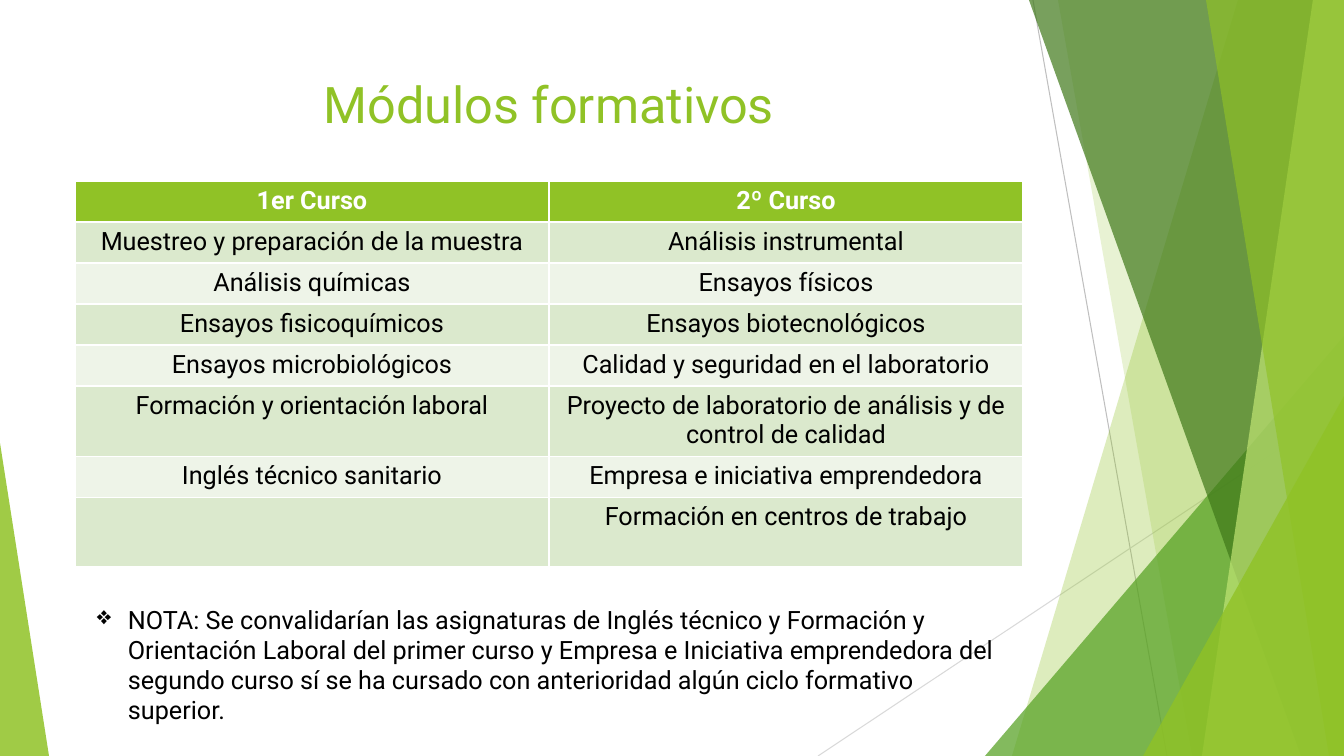
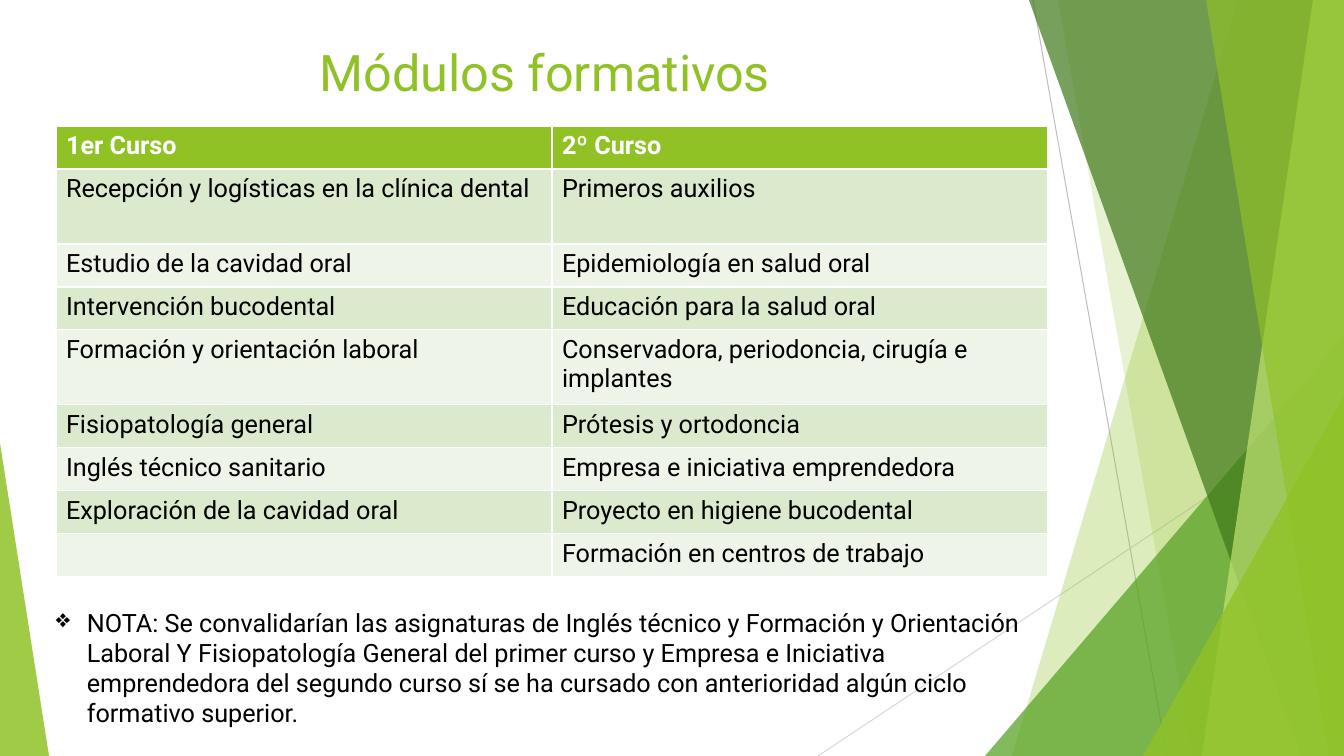
from lxml import etree
from pptx import Presentation
from pptx.dml.color import RGBColor
from pptx.enum.shapes import MSO_CONNECTOR, MSO_SHAPE
from pptx.enum.text import PP_ALIGN
from pptx.oxml.ns import qn
from pptx.util import Pt

STRAIGHT = MSO_CONNECTOR.STRAIGHT
TRIANGLE = MSO_SHAPE.ISOSCELES_TRIANGLE
LEFT, CENTER = PP_ALIGN.LEFT, PP_ALIGN.CENTER

FONT = "Roboto"
WIDE, HIGH = 1344, 756
INDENT = 31
LIME = RGBColor(0x90, 0xC2, 0x26)
GREEN = RGBColor(0x54, 0xA0, 0x21)
DARK = RGBColor(0x3F, 0x78, 0x19)
PALE = RGBColor(0xC0, 0xE4, 0x74)
MIST = RGBColor(0xEE, 0xF4, 0xE8)
SAGE = RGBColor(0xDB, 0xE9, 0xCD)
GREY = RGBColor(0xBF, 0xBF, 0xBF)
SILVER = RGBColor(0xD9, 0xD9, 0xD9)
WHITE = RGBColor(0xFF, 0xFF, 0xFF)
BLACK = RGBColor(0x00, 0x00, 0x00)

FIRST = [
    ("1er Curso", "2º Curso", 41),
    ("Muestreo y preparación de la muestra", "Análisis instrumental", 41),
    ("Análisis químicas", "Ensayos físicos", 41),
    ("Ensayos fisicoquímicos", "Ensayos biotecnológicos", 41),
    ("Ensayos microbiológicos", "Calidad y seguridad en el laboratorio", 41),
    ("Formación y orientación laboral",
     "Proyecto de laboratorio de análisis y de control de calidad", 69),
    ("Inglés técnico sanitario", "Empresa e iniciativa emprendedora", 41),
    ("", "Formación en centros de trabajo", 69),
]
SECOND = [
    ("1er Curso", "2º Curso", 43),
    ("Recepción y logísticas en la clínica dental", "Primeros auxilios", 75),
    ("Estudio de la cavidad oral", "Epidemiología en salud oral", 43),
    ("Intervención bucodental", "Educación para la salud oral", 43),
    ("Formación y orientación laboral",
     "Conservadora, periodoncia, cirugía e implantes", 75),
    ("Fisiopatología general", "Prótesis y ortodoncia", 43),
    ("Inglés técnico sanitario", "Empresa e iniciativa emprendedora", 43),
    ("Exploración de la cavidad oral", "Proyecto en higiene bucodental", 43),
    ("", "Formación en centros de trabajo", 43),
]
NOTE = ("NOTA: Se convalidarían las asignaturas de Inglés técnico y Formación y "
        "Orientación Laboral {}del primer curso y Empresa e Iniciativa "
        "emprendedora del segundo curso sí se ha cursado con anterioridad algún "
        "ciclo formativo superior.")


def px(count):
    """Turn pixels into EMU."""
    return round(count * 914400 / 100.8)


def style(para, size, color, align=LEFT, bold=False):
    """Set the look of one paragraph."""
    para.alignment = align
    font = para.font
    font.name, font.size, font.bold = FONT, Pt(size), bold
    font.color.rgb = color


def tint(shape, color, alpha):
    """Fill a shape with a see-through colour and no outline."""
    shape.shadow.inherit = False
    shape.line.fill.background()
    shape.fill.solid()
    shape.fill.fore_color.rgb = color
    node = shape.element.spPr.find(".//" + qn("a:srgbClr"))
    etree.SubElement(node, qn("a:alpha"), val=str(alpha * 1000))


def ray(slide, ends, color):
    """Draw a thin line."""
    line = slide.shapes.add_connector(STRAIGHT, *map(px, ends))
    line.line.color.rgb = color
    line.line.width = Pt(0.75)
    etree.SubElement(line.element.spPr, qn("a:effectLst"))


def wing(slide, top, foot, color, alpha):
    """Draw a full-height band from a slanted edge to the right side."""
    pen = slide.shapes.build_freeform(px(top), 0)
    pen.add_line_segments(
        [(px(x), px(y)) for x, y in ((WIDE, 0), (WIDE, HIGH), (foot, HIGH))])
    tint(pen.convert_to_shape(), color, alpha)


def peak(slide, left, top, width, apex, color, alpha):
    """Draw a right triangle standing on the lower edge."""
    box = map(px, (left, top, width, HIGH - top))
    shape = slide.shapes.add_shape(TRIANGLE, *box)
    shape.adjustments[0] = apex
    tint(shape, color, alpha)


def decor(slide):
    """Draw the green facets at the sides."""
    ray(slide, (1033, 0, 1167, HIGH), GREY)
    ray(slide, (WIDE, 406, 818, HIGH), SILVER)
    wing(slide, 1238, 1012, LIME, 30)
    wing(slide, 1058, 1192, LIME, 20)
    peak(slide, 985, 336, 359, 1, GREEN, 72)
    wing(slide, 1029, 1301, DARK, 70)
    wing(slide, 1313, 1202, PALE, 70)
    wing(slide, 1206, 1329, LIME, 65)
    peak(slide, 1143, 396, 201, 1, LIME, 80)
    peak(slide, 0, 443, 49, 0, LIME, 85)


def label(slide, box, text):
    """Place a wrapped text box and return its paragraph."""
    frame = slide.shapes.add_textbox(*map(px, box)).text_frame
    frame.word_wrap = True
    frame.text = text
    return frame.paragraphs[0]


def title(slide, box):
    """Place the slide title."""
    style(label(slide, box, "Módulos formativos"), 36, LIME, CENTER)


def grid(slide, left, top, width, rows, align):
    """Place the table of both courses."""
    high = sum(row[-1] for row in rows)
    box = map(px, (left, top, width, high))
    table = slide.shapes.add_table(len(rows), 2, *box).table
    for num, (*texts, tall) in enumerate(rows):
        table.rows[num].height = px(tall)
        head = num == 0
        back = LIME if head else SAGE if num % 2 else MIST
        for col, text in enumerate(texts):
            cell = table.cell(num, col)
            cell.text = text
            cell.fill.solid()
            cell.fill.fore_color.rgb = back
            style(cell.text_frame.paragraphs[0], 18,
                  WHITE if head else BLACK, align, head)


def note(slide, box, text):
    """Place the bulleted note."""
    para = label(slide, box, text)
    style(para, 18, BLACK)
    props = para._p.get_or_add_pPr()
    props.set("marL", str(px(INDENT)))
    props.set("indent", str(-px(INDENT)))
    mark = etree.Element(qn("a:buChar"), char="❖")
    props.insert(0, mark)


def page(deck, head, table, foot, extra):
    """Build one slide of modules."""
    slide = deck.slides.add_slide(deck.slide_layouts[6])
    decor(slide)
    title(slide, head)
    grid(slide, *table)
    note(slide, foot, NOTE.format(extra))


def main():
    """Build and save the deck."""
    deck = Presentation()
    deck.slide_width, deck.slide_height = px(WIDE), px(HIGH)
    page(deck, (75, 68, 948, 145), (75, 181, 948, FIRST, CENTER),
         (87, 599, 935, 132), "")
    page(deck, (71, 36, 948, 145), (56, 126, 992, SECOND, LEFT),
         (46, 602, 995, 132), "Y Fisiopatología General ")
    deck.save("out.pptx")


if __name__ == "__main__":
    main()
